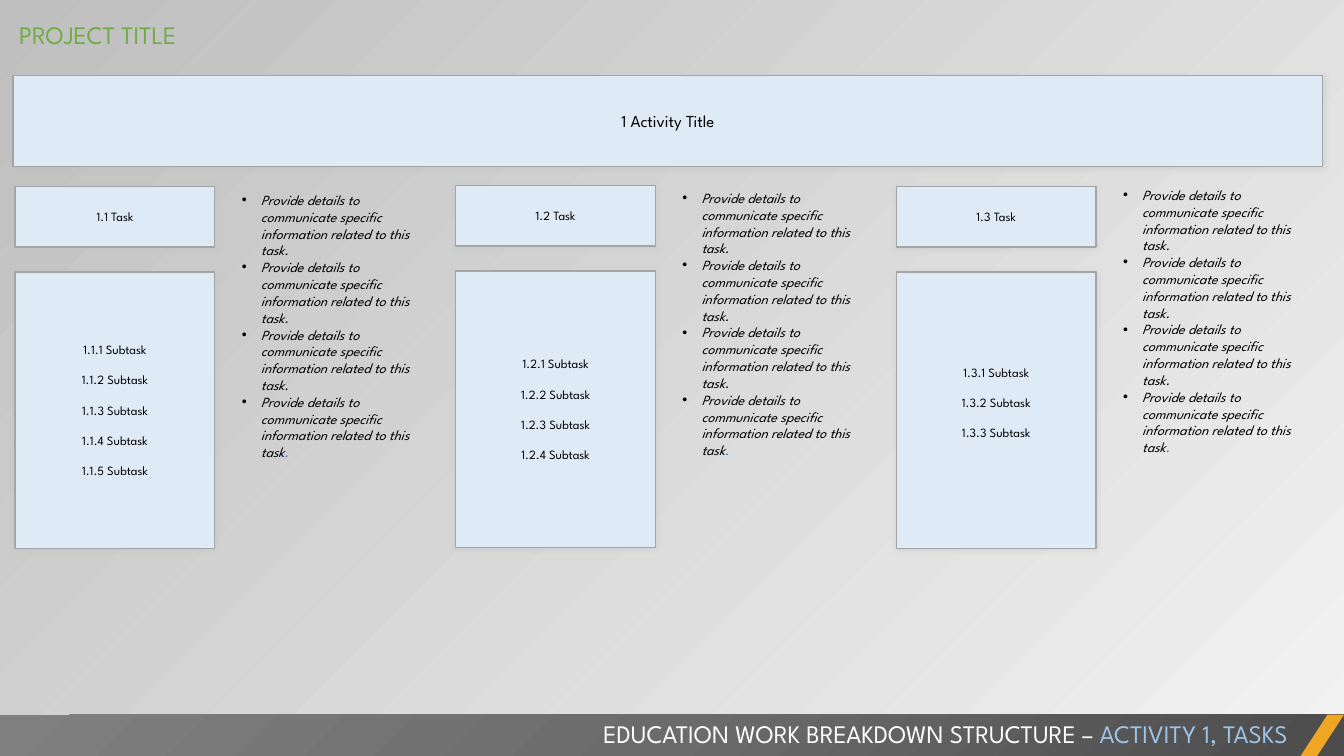
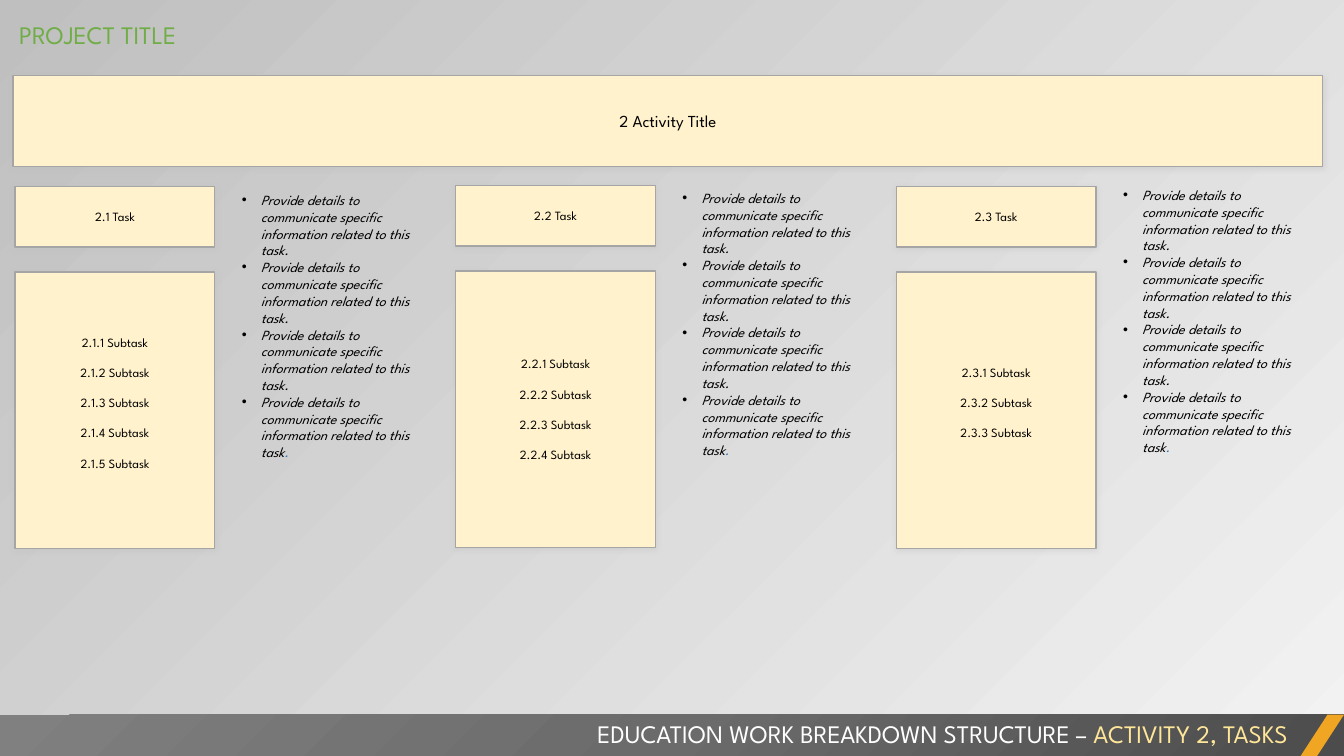
from dataclasses import dataclass

from lxml import etree
from pptx import Presentation
from pptx.dml.color import RGBColor
from pptx.enum.shapes import MSO_SHAPE
from pptx.enum.text import MSO_ANCHOR, MSO_AUTO_SIZE, PP_ALIGN
from pptx.oxml.ns import qn
from pptx.util import Inches, Pt

RECT, SLANT = MSO_SHAPE.RECTANGLE, MSO_SHAPE.PARALLELOGRAM
LEFT, CENTER, RIGHT = PP_ALIGN.LEFT, PP_ALIGN.CENTER, PP_ALIGN.RIGHT
TOP, MIDDLE = MSO_ANCHOR.TOP, MSO_ANCHOR.MIDDLE
FIXED = MSO_AUTO_SIZE.NONE

FONT = "League Spartan"
BLACK = RGBColor(0x00, 0x00, 0x00)
WHITE = RGBColor(0xFF, 0xFF, 0xFF)
GREEN = RGBColor(0x70, 0xAD, 0x47)
ORANGE = RGBColor(0xF0, 0xA6, 0x22)
BLUE = RGBColor(0x2E, 0x75, 0xB6)
SKY = RGBColor(0x9D, 0xC3, 0xE6)
PALE_BLUE = RGBColor(0xDE, 0xEB, 0xF7)
GOLD = RGBColor(0xFF, 0xE6, 0x99)
CREAM = RGBColor(0xFF, 0xF2, 0xCC)
EDGE = RGBColor(0xA5, 0xA5, 0xA5)
SILVER = RGBColor(0xBF, 0xBF, 0xBF)
MIST = RGBColor(0xF2, 0xF2, 0xF2)
COAL = RGBColor(0x4C, 0x4C, 0x4C)
SLATE = RGBColor(0x6B, 0x6B, 0x6B)
ASH = RGBColor(0x80, 0x80, 0x80)

WIDE, HIGH = 13.33, 7.5
BAND_TOP, BAND_HIGH = 7.09, 0.41
LANE_LEFT, LANE_STEP = 0.15, 4.37
BOX_WIDE = 1.98
NOTE = "Provide details to communicate specific information related to this task"
NOTE_COUNT = 4


@dataclass(frozen=True)
class Box:
    left: float
    top: float
    width: float
    height: float

    def place(self) -> tuple:
        return tuple(map(Inches, (self.left, self.top, self.width, self.height)))


@dataclass(frozen=True)
class Lane:
    top: float
    note_top: float
    count: int
    lift: float = 0  # extra space under the subtasks


@dataclass(frozen=True)
class Page:
    number: int
    fill: RGBColor
    accent: RGBColor
    lanes: tuple


@dataclass(frozen=True)
class Stop:
    at: int
    color: RGBColor
    alpha: int = 100


PAGES = (
    Page(1, PALE_BLUE, SKY,
         (Lane(1.85, 1.85, 5), Lane(1.84, 1.83, 4), Lane(1.85, 1.8, 3, 0.15))),
    Page(2, CREAM, GOLD,
         (Lane(1.85, 1.85, 5, 0.15), Lane(1.84, 1.83, 4), Lane(1.85, 1.8, 3, 0.15))),
)


def add(parent, tag: str, **attrs):
    return etree.SubElement(parent, qn(tag), {k: str(v) for k, v in attrs.items()})


def tint(parent, color: RGBColor, alpha: int) -> None:
    node = add(parent, "a:srgbClr", val=color)
    if alpha < 100:
        add(node, "a:alpha", val=alpha * 1000)


def blend(owner, fill, stops: tuple):
    """Give a fill its gradient stops; return the node that takes the direction."""
    fill.gradient()
    node = next(owner.element.iter(qn("a:gradFill")))
    for child in list(node):
        node.remove(child)
    group = add(node, "a:gsLst")
    for stop in stops:
        tint(add(group, "a:gs", pos=stop.at * 1000), stop.color, stop.alpha)
    return node


def style(part, size: float, color: RGBColor, italic: bool = False) -> None:
    for run in part.runs:
        font = run.font
        font.name, font.size, font.italic = FONT, Pt(size), italic
        font.color.rgb = color


def add_text(slide, box: Box):
    frame = slide.shapes.add_textbox(*box.place()).text_frame
    frame.word_wrap = True
    return frame


def add_plain(slide, kind, box: Box):
    shape = slide.shapes.add_shape(kind, *box.place())
    shape.shadow.inherit = False
    shape.line.fill.background()
    return shape


def add_card(slide, box: Box, fill: RGBColor, lines: list, size: float,
             lift: float = 0) -> None:
    shape = add_plain(slide, RECT, box)
    shape.fill.solid()
    shape.fill.fore_color.rgb = fill
    shape.line.color.rgb = EDGE
    shape.line.width = Pt(1)
    glow = add(shape.element.spPr.find(qn("a:effectLst")), "a:outerShdw",
               blurRad=Pt(4), dist=Pt(1), dir=90 * 60000, rotWithShape=0)
    tint(glow, SILVER, 40)
    frame = shape.text_frame
    frame.vertical_anchor = MIDDLE
    frame.margin_bottom = Inches(0.05 + lift)
    frame.text = "\n".join(lines)
    for i, part in enumerate(frame.paragraphs):
        part.alignment = CENTER
        part.space_before = Pt(10.8 if i else 0)
        style(part, size, BLACK)


def add_notes(slide, box: Box) -> None:
    frame = add_text(slide, box)
    frame.text = "\n".join([NOTE + "."] * (NOTE_COUNT - 1) + [NOTE])
    for part in frame.paragraphs:
        props = part._p.get_or_add_pPr()
        props.set("marL", str(Inches(0.19)))
        props.set("indent", str(-Inches(0.19)))
        add(props, "a:buFont", typeface="Arial")
        add(props, "a:buChar", char="•")
    last = frame.paragraphs[-1]
    dot = last.add_run()
    dot.text = "."
    for part in frame.paragraphs:
        style(part, 10, BLACK, italic=True)
    dot.font.color.rgb = BLUE


def add_title(slide) -> None:
    title = slide.shapes.title
    title.left, title.top, title.width, title.height = Box(0.09, 0.14, 10.11, 0.4).place()
    frame = title.text_frame
    frame.text = "PROJECT TITLE"
    frame.auto_size, frame.vertical_anchor = FIXED, TOP
    part = frame.paragraphs[0]
    part.alignment = LEFT
    style(part, 18, GREEN)


def add_footer(slide, page: Page) -> None:
    band = add_plain(slide, RECT, Box(0, BAND_TOP, WIDE, BAND_HIGH))
    node = blend(band, band.fill, (Stop(0, COAL), Stop(50, SLATE), Stop(100, ASH)))
    add(add(node, "a:path", path="circle"), "a:fillToRect", l=100000, t=100000)
    slash = add_plain(slide, SLANT, Box(12.9, BAND_TOP, 0.43, BAND_HIGH))
    slash.adjustments[0] = 0.65
    slash.fill.solid()
    slash.fill.fore_color.rgb = ORANGE
    frame = add_text(slide, Box(2.62, 7.08, 10.25, 0.4))
    frame.text = "EDUCATION WORK BREAKDOWN STRUCTURE – "
    part = frame.paragraphs[0]
    part.alignment = RIGHT
    tail = part.add_run()
    tail.text = f"ACTIVITY {page.number}, TASKS"
    style(part, 18, WHITE)
    tail.font.color.rgb = page.accent


def add_lane(slide, page: Page, index: int, lane: Lane) -> None:
    left = LANE_LEFT + index * LANE_STEP
    code = f"{page.number}.{index + 1}"
    tasks = [f"{code}.{n} Subtask" for n in range(1, lane.count + 1)]
    add_card(slide, Box(left, lane.top, BOX_WIDE, 0.6), page.fill, [f"{code} Task"], 9)
    add_card(slide, Box(left, lane.top + 0.85, BOX_WIDE, 2.74), page.fill, tasks, 9,
             lane.lift)
    add_notes(slide, Box(left + 2.15, lane.note_top, 2.06, 3))


def build(deck, page: Page) -> None:
    slide = deck.slides.add_slide(deck.slide_layouts.get_by_name("Title Only"))
    add_title(slide)
    add_card(slide, Box(0.13, 0.75, 12.99, 0.9), page.fill,
             [f"{page.number} Activity Title"], 12)
    for index, lane in enumerate(page.lanes):
        add_lane(slide, page, index, lane)
    add_footer(slide, page)


def main() -> None:
    deck = Presentation()
    deck.slide_width, deck.slide_height = Inches(WIDE), Inches(HIGH)
    master = deck.slide_master
    node = blend(master, master.background.fill, (Stop(0, MIST, 40), Stop(100, SILVER)))
    add(node, "a:lin", ang=225 * 60000, scaled=0)
    for page in PAGES:
        build(deck, page)
    deck.save("out.pptx")


if __name__ == "__main__":
    main()
